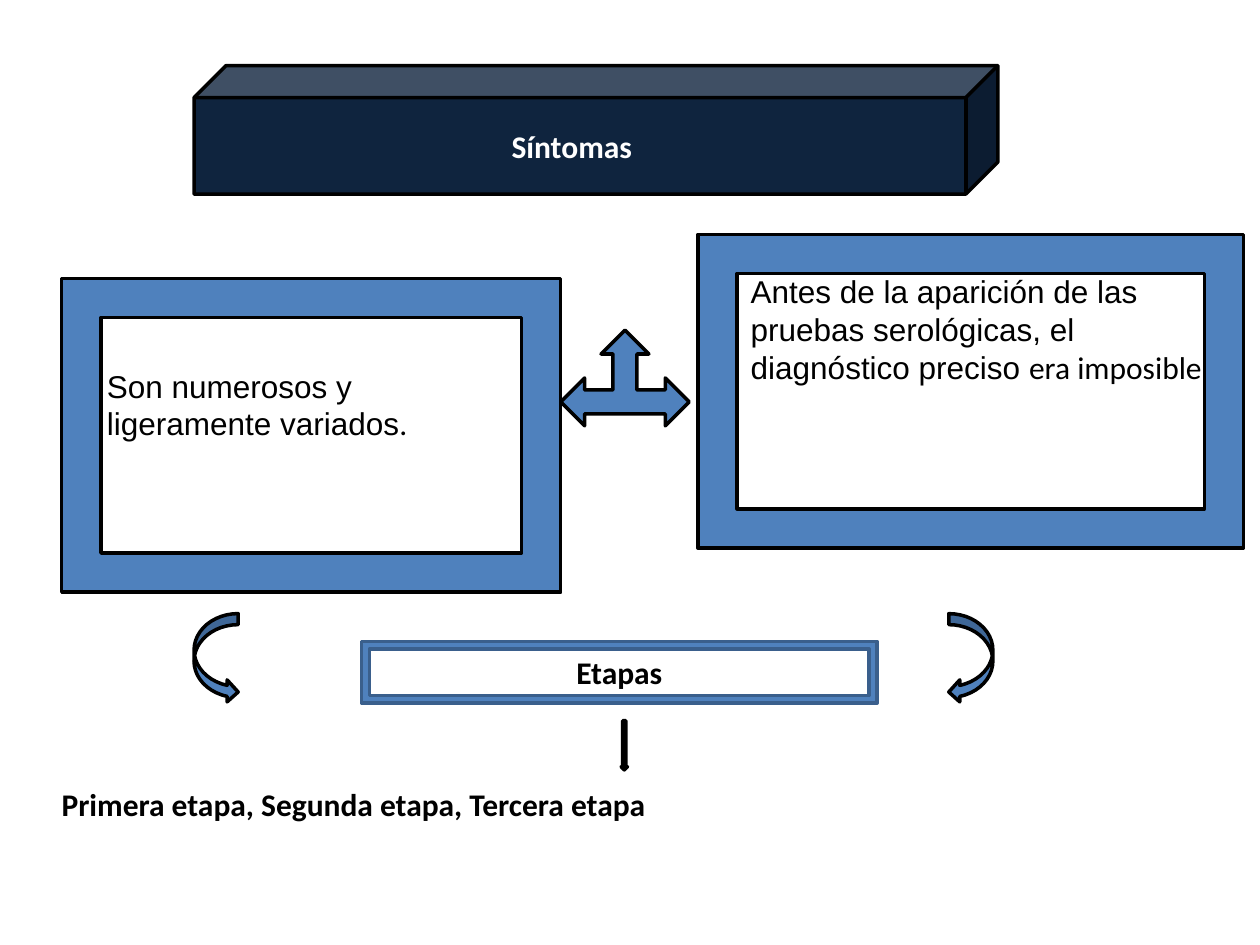
"""Build the slide on symptoms and stages."""
import pptx
import pptx.util
import pptx.dml.color
import pptx.enum.shapes
import pptx.enum.text

Inches = pptx.util.Inches
Kind = pptx.enum.shapes.MSO_SHAPE
Align = pptx.enum.text.PP_ALIGN
Anchor = pptx.enum.text.MSO_ANCHOR
HUES = {"navy": "0F243E", "blue": "4F81BD", "edge": "3A5F8C",
        "black": "000000", "white": "FFFFFF"}


def hue(name):
    return pptx.dml.color.RGBColor.from_string(HUES[name])


def write(shape, *runs, color="black", bold=False, align=Align.LEFT,
          anchor=Anchor.TOP, left=0.1, top=0.05):
    frame = shape.text_frame
    frame.word_wrap = True
    frame.vertical_anchor = anchor
    frame.margin_left = Inches(left)
    frame.margin_top = Inches(top)
    para = frame.paragraphs[0]
    para.alignment = align
    for text, face in runs:
        run = para.add_run()
        run.text = text
        run.font.name = face
        run.font.size = pptx.util.Pt(18)
        run.font.bold = bold
        run.font.color.rgb = hue(color)


deck = pptx.Presentation()
deck.slide_width = Inches(10)
deck.slide_height = Inches(7.5)
slide = deck.slides.add_slide(deck.slide_layouts[6])

parts = [
    ("title", Kind.CUBE, (1.54, 0.52, 6.38, 1.02), "navy", "black"),
    ("link", Kind.LEFT_RIGHT_UP_ARROW, (4.45, 2.62, 1.02, 0.76), "blue", "black"),
    ("left", Kind.FRAME, (0.49, 2.21, 3.96, 2.49), "blue", "black"),
    ("right", Kind.FRAME, (5.54, 1.86, 4.33, 2.49), "blue", "black"),
    ("west", Kind.CURVED_RIGHT_ARROW, (1.54, 4.87, 0.35, 0.71), "blue", "black"),
    ("east", Kind.CURVED_LEFT_ARROW, (7.53, 4.87, 0.35, 0.71), "blue", "black"),
    ("stages", Kind.FRAME, (2.87, 5.09, 4.09, 0.49), "blue", "edge"),
    ("down", Kind.DOWN_ARROW, (4.93, 5.72, 0.05, 0.39), "blue", "black"),
]
made = {}
for name, kind, box, fill, line in parts:
    shape = slide.shapes.add_shape(kind, *map(Inches, box))
    shape.shadow.inherit = False
    shape.fill.solid()
    shape.fill.fore_color.rgb = hue(fill)
    shape.line.color.rgb = hue(line)
    shape.line.width = pptx.util.Pt(2)
    made[name] = shape

write(made["title"], ("Síntomas", "Calibri"), color="white", bold=True,
      anchor=Anchor.MIDDLE, left=2.52)
write(made["stages"], ("Etapas", "Calibri"), bold=True,
      align=Align.CENTER, anchor=Anchor.MIDDLE)

texts = [
    ((0.75, 2.57, 3.32, 1.31), 0.34, False,
     [("Son numerosos y ligeramente variados", "Arial"), (".", "Calibri")]),
    ((5.86, 2.11, 3.8, 1.92), 0.05, False,
     [("Antes de la aparición de las pruebas serológicas, "
       "el diagnóstico preciso ", "Arial"), ("era imposible", "Calibri")]),
    ((0.39, 6.18, 9.61, 1.01), 0.05, True,
     [("Primera etapa, Segunda etapa, Tercera etapa", "Calibri")]),
]
for box, top, bold, runs in texts:
    area = slide.shapes.add_textbox(*map(Inches, box))
    write(area, *runs, bold=bold, top=top)

deck.save("out.pptx")
